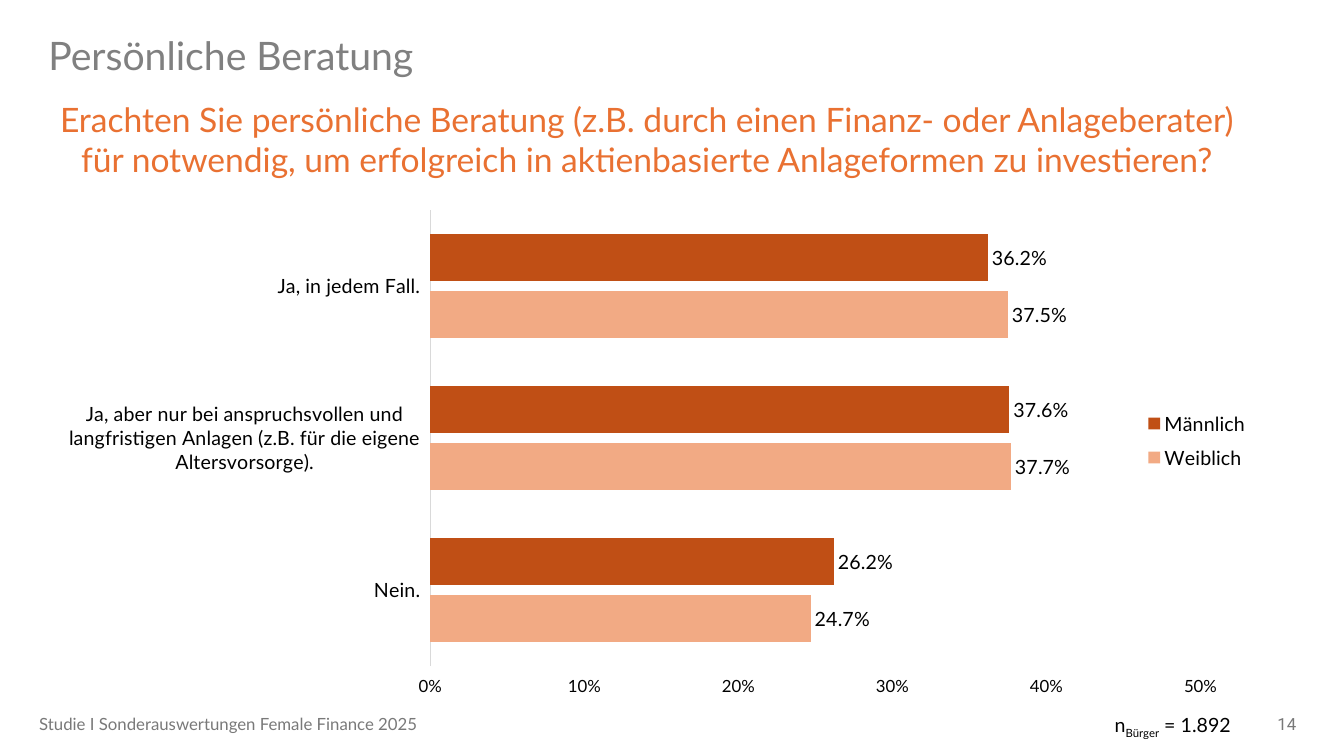
from dataclasses import dataclass

import pptx
import pptx.chart.data
import pptx.dml.color
import pptx.enum.chart
import pptx.enum.text
import pptx.oxml
import pptx.oxml.ns
import pptx.util

Cm, Pt = pptx.util.Cm, pptx.util.Pt
ALIGN = pptx.enum.text.PP_ALIGN
ANCHOR = pptx.enum.text.MSO_ANCHOR
CHART = pptx.enum.chart


@dataclass
class Label:
    runs: tuple[str, ...]
    left: float
    top: float
    width: float
    height: float
    size: float
    color: str
    align: ALIGN = ALIGN.LEFT
    anchor: ANCHOR = ANCHOR.MIDDLE
    font: str = "Lato"
    line_spacing: float = 1.0


@dataclass
class Group:
    name: str
    values: tuple[float, ...]
    color: str


LABELS = [
    Label(("Persönliche Beratung",), 0.97, 0.79, 28.37, 1.35, 28, "808080", line_spacing=0.9),
    Label(("Erachten Sie persönliche Beratung (z.B. durch einen Finanz- oder Anlageberater) "
           "für notwendig, um erfolgreich in aktienbasierte Anlageformen zu investieren?",),
          0.97, 2.36, 30.66, 2.31, 24, "E97132", ALIGN.CENTER, ANCHOR.TOP),
    # The second run is a subscript
    Label(("n", "Bürger", " = 1.892"), 26.52, 17.83, 4.75, 0.86, 14, "000000",
          ALIGN.RIGHT, ANCHOR.TOP),
    Label(("14",), 25.3, 17.73, 7.62, 1.02, 12, "797979", ALIGN.RIGHT, font="Roboto"),
    Label(("Studie I Sonderauswertungen Female Finance 2025",),
          0.74, 17.73, 17.02, 1.02, 12, "797979"),
]

ANSWERS = [
    "Nein.",
    "Ja, aber nur bei anspruchsvollen und langfristigen Anlagen "
    "(z.B. für die eigene Altersvorsorge).",
    "Ja, in jedem Fall.",
]
GROUPS = [
    Group("Weiblich", (0.247, 0.377, 0.375), "F2AA84"),
    Group("Männlich", (0.262, 0.376, 0.362), "C04F15"),
]


def rgb(value: str) -> pptx.dml.color.RGBColor:
    return pptx.dml.color.RGBColor.from_string(value)


def style(font, size: float, color: str = "000000", name: str = "Lato") -> None:
    font.size = Pt(size)
    font.name = name
    font.color.rgb = rgb(color)


def add_label(slide, label: Label) -> None:
    sp = slide.shapes.add_textbox(Cm(label.left), Cm(label.top), Cm(label.width), Cm(label.height))
    tf = sp.text_frame
    tf.word_wrap = True
    tf.vertical_anchor = label.anchor
    p = tf.paragraphs[0]
    p.alignment = label.align
    p.line_spacing = label.line_spacing
    for i, text in enumerate(label.runs):
        r = p.add_run()
        r.text = text
        style(r.font, label.size, label.color, label.font)
        if i == 1:
            r._r.get_or_add_rPr().set("baseline", "-25000")


def set_layout(parent, index: int, box: tuple[float, ...], inner: bool = False) -> None:
    """Place a chart part by fractions of the chart: x, y, width, height."""
    for old in parent.findall(pptx.oxml.ns.qn("c:layout")):
        parent.remove(old)
    target = '<c:layoutTarget val="inner"/>' if inner else ""
    modes = "".join(f'<c:{k}Mode val="edge"/>' for k in "xy")
    sizes = "".join(f'<c:{k} val="{v}"/>' for k, v in zip("xywh", box))
    parent.insert(index, pptx.oxml.parse_xml(
        f'<c:layout {pptx.oxml.ns.nsdecls("c")}><c:manualLayout>'
        f"{target}{modes}{sizes}</c:manualLayout></c:layout>"))


def add_bar_chart(slide) -> None:
    data = pptx.chart.data.CategoryChartData(number_format="0.0%")
    data.categories = ANSWERS
    for group in GROUPS:
        data.add_series(group.name, group.values)
    chart = slide.shapes.add_chart(CHART.XL_CHART_TYPE.BAR_CLUSTERED, Cm(0.94), Cm(4.72),
                                   Cm(30.76), Cm(13.16), data).chart
    chart.has_title = False
    style(chart.font, 10)

    # Bars and value labels
    plot = chart.plots[0]
    plot.gap_width = 100
    plot.overlap = -20
    plot.vary_by_categories = False
    for series, group in zip(plot.series, GROUPS):
        series.format.fill.solid()
        series.format.fill.fore_color.rgb = rgb(group.color)
        labels = series.data_labels
        labels.show_value = True
        labels.position = CHART.XL_LABEL_POSITION.OUTSIDE_END
        labels.number_format = "0.0%"
        labels.number_format_is_linked = False
        style(labels.font, 14)

    # Axes
    answers = chart.category_axis
    answers.major_tick_mark = CHART.XL_TICK_MARK.NONE
    answers.tick_label_position = CHART.XL_TICK_LABEL_POSITION.LOW
    answers.format.line.color.rgb = rgb("D9D9D9")
    answers.format.line.width = Pt(0.75)
    style(answers.tick_labels.font, 14)
    share = chart.value_axis
    share.minimum_scale, share.maximum_scale, share.major_unit = 0, 0.5, 0.1
    share.has_major_gridlines = False
    share.format.line.fill.background()
    share.tick_labels.number_format = "0%"
    share.tick_labels.number_format_is_linked = False
    style(share.tick_labels.font, 12)

    # Legend and plot area
    chart.has_legend = True
    chart.legend.position = CHART.XL_LEGEND_POSITION.RIGHT
    chart.legend.include_in_layout = False
    style(chart.legend.font, 14)
    set_layout(chart.legend._element, 1, (0.9, 0.41, 0.1, 0.15))
    set_layout(chart._chartSpace.chart.plotArea, 0, (0.322, 0.043, 0.631, 0.874), inner=True)


def main() -> None:
    prs = pptx.Presentation()
    prs.slide_width, prs.slide_height = Cm(33.87), Cm(19.05)
    s = prs.slides.add_slide(prs.slide_layouts[6])
    add_bar_chart(s)
    for label in LABELS:
        add_label(s, label)
    prs.save("out.pptx")


if __name__ == "__main__":
    main()
